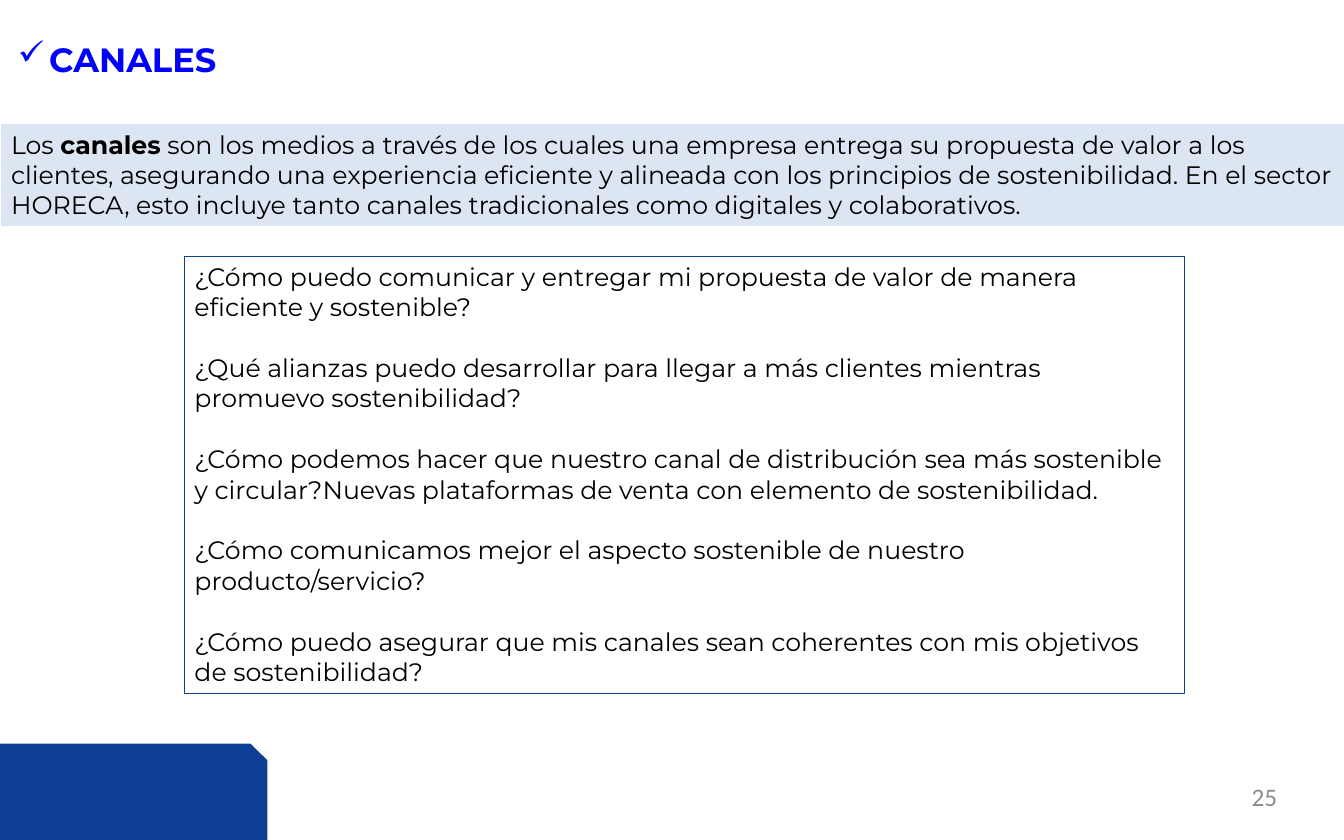
from collections import namedtuple
from dataclasses import dataclass

from lxml.etree import SubElement
from pptx import Presentation
from pptx.dml.color import RGBColor
from pptx.enum.shapes import MSO_SHAPE as Preset
from pptx.enum.text import MSO_ANCHOR as Anchor, MSO_AUTO_SIZE as AutoSize, PP_ALIGN as Align
from pptx.oxml.ns import qn
from pptx.util import Cm, Pt

Box = namedtuple("Box", "left top width height")


@dataclass(frozen=True)
class Theme:
    navy: str = "0D3F96"
    heading: str = "0000FF"
    band: str = "DCE6F2"
    ink: str = "000000"
    grey: str = "8C8C8C"
    font: str = "Montserrat"
    number_font: str = "Calibri"
    title_size: int = 24
    body_size: int = 18


THEME = Theme()

DEFINITION = [
    ("Los ", False),
    ("canales", True),
    (" son los medios a través de los cuales una empresa entrega su propuesta de valor a los "
     "clientes, asegurando una experiencia eficiente y alineada con los principios de "
     "sostenibilidad. En el sector HORECA, esto incluye tanto canales tradicionales como "
     "digitales y colaborativos.", False),
]
QUESTIONS = [
    "¿Cómo puedo comunicar y entregar mi propuesta de valor de manera eficiente y sostenible?",
    "¿Qué alianzas puedo desarrollar para llegar a más clientes mientras promuevo sostenibilidad?",
    "¿Cómo podemos hacer que nuestro canal de distribución sea más sostenible y circular?"
    "Nuevas plataformas de venta con elemento de sostenibilidad.",
    "¿Cómo comunicamos mejor el aspecto sostenible de nuestro producto/servicio?",
    "¿Cómo puedo asegurar que mis canales sean coherentes con mis objetivos de sostenibilidad?",
]


def rgb(code):
    return RGBColor.from_string(code)


def place(holder, box):
    holder.left, holder.top, holder.width, holder.height = (Cm(length) for length in box)


def write(holder, paragraphs, size=THEME.body_size, font=THEME.font, color=THEME.ink,
          align=Align.LEFT, bullet=None, indent=0, gap=0, margins=(0.25, 0.13)):
    frame = holder.text_frame
    frame.word_wrap = True
    frame.auto_size = AutoSize.NONE
    frame.vertical_anchor = Anchor.TOP
    frame.margin_left = frame.margin_right = Cm(margins[0])
    frame.margin_top = frame.margin_bottom = Cm(margins[1])
    for index, pieces in enumerate(paragraphs):
        paragraph = frame.add_paragraph() if index else frame.paragraphs[0]
        properties = paragraph._p.get_or_add_pPr()
        properties.set("marL", str(Cm(indent)))
        properties.set("indent", str(-Cm(indent)))
        if bullet:
            SubElement(properties, qn("a:buChar")).set("char", bullet)
        else:
            SubElement(properties, qn("a:buNone"))
        paragraph.alignment = align
        paragraph.space_before = Pt(0)
        paragraph.space_after = Pt(gap if index < len(paragraphs) - 1 else 0)
        for text, bold in pieces:
            run = paragraph.add_run()
            run.text = text
            run.font.name = font
            run.font.size = Pt(size)
            run.font.bold = bold
            run.font.color.rgb = rgb(color)


def panel(slide, preset, box, fill):
    shape = slide.shapes.add_shape(preset, *(Cm(length) for length in box))
    shape.shadow.inherit = False
    shape.fill.solid()
    shape.fill.fore_color.rgb = rgb(fill)
    shape.line.fill.background()
    return shape


def add_heading(slide, box):
    heading = slide.shapes.title
    place(heading, box)
    write(heading, [[("CANALES", True)]], size=THEME.title_size, color=THEME.heading,
          bullet="✓", indent=0.79)


def add_definition(slide, box):
    band = panel(slide, Preset.RECTANGLE, box, THEME.band)
    write(band, [DEFINITION])


def add_questions(slide, box):
    questions = slide.placeholders[1]
    place(questions, box)
    questions.line.color.rgb = rgb(THEME.navy)
    questions.line.width = Pt(0.75)
    write(questions, [[(question, False)] for question in QUESTIONS], gap=21.9)


def add_footer(slide, box):
    corner = panel(slide, Preset.SNIP_1_RECTANGLE,
                   Box(box.left, box.top, 6.7, box.height), THEME.navy)
    corner.line.color.rgb = rgb(THEME.navy)
    corner.line.width = Pt(2)
    number_box = Box(box.left + box.width - 9.48, box.top + 0.92, 7.8, 1.07)
    number = slide.shapes.add_textbox(*(Cm(length) for length in number_box))
    write(number, [[("25", False)]], font=THEME.number_font, color=THEME.grey,
          align=Align.RIGHT, margins=(0, 0))


def build_channels_slide(deck, page):
    slide = deck.slides.add_slide(deck.slide_layouts[1])
    add_footer(slide, Box(page.left, page.height - 2.39, page.width, 2.39))
    add_heading(slide, Box(page.left + 0.2, page.top + 0.84, 27.13, 1.27))
    add_definition(slide, Box(page.left + 0.03, page.top + 3.12, page.width - 0.03, 2.57))
    add_questions(slide, Box(page.left + 4.65, page.top + 6.45, 25.2, 11.02))


def main():
    page = Box(0, 0, 33.86, 21.16)
    deck = Presentation()
    deck.slide_width, deck.slide_height = Cm(page.width), Cm(page.height)
    build_channels_slide(deck, page)
    deck.save("out.pptx")


if __name__ == "__main__":
    main()
